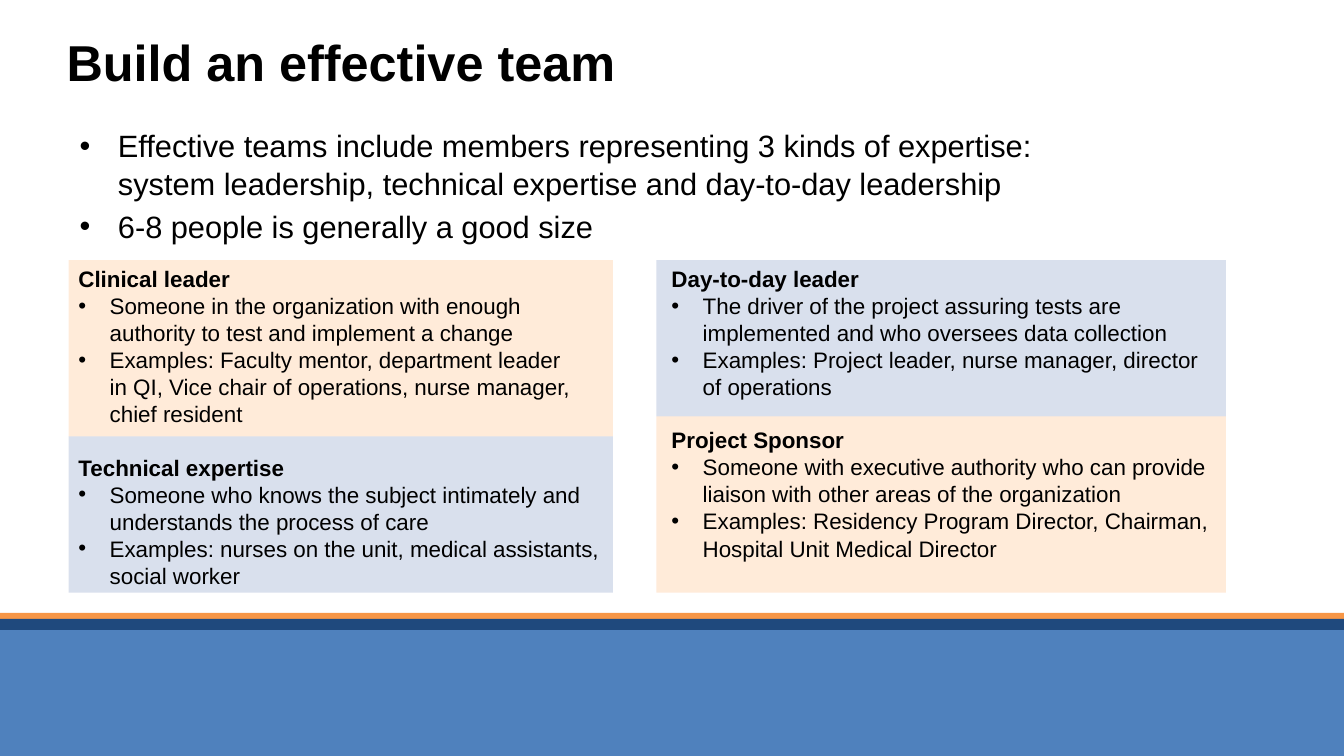
from dataclasses import dataclass

from lxml import etree
from pptx import Presentation
from pptx.dml.color import RGBColor
from pptx.enum.shapes import MSO_SHAPE
from pptx.enum.text import MSO_ANCHOR, MSO_AUTO_SIZE, PP_ALIGN
from pptx.oxml.ns import qn
from pptx.util import Inches, Pt

RECT = MSO_SHAPE.RECTANGLE
TOP, MIDDLE = MSO_ANCHOR.TOP, MSO_ANCHOR.MIDDLE
LEFT = PP_ALIGN.LEFT
NO_FIT = MSO_AUTO_SIZE.NONE

BLACK = RGBColor(0x00, 0x00, 0x00)
ORANGE = RGBColor(0xFF, 0x79, 0x00)
NAVY = RGBColor(0x01, 0x31, 0x89)
STRIPE = RGBColor(0xF7, 0x96, 0x46)
BLUE = RGBColor(0x4F, 0x81, 0xBD)
DARK = RGBColor(0x1F, 0x49, 0x7D)

FONT = "Arial"
LEADING = 1.205  # line height per point of text


@dataclass
class Band:
    top: float
    height: float
    color: RGBColor


@dataclass
class Card:
    left: float
    top: float
    width: float
    height: float
    color: RGBColor
    inset: tuple[float, float]  # left, top
    head: str
    points: list[str]


BANDS = [Band(6.08, 0.11, STRIPE), Band(6.19, 1.31, BLUE), Band(6.14, 0.11, DARK)]

GOALS = [
    "Effective teams include members representing 3 kinds of expertise:\n"
    "system leadership, technical expertise and day-to-day leadership",
    "6-8 people is generally a good size",
]

CARDS = [
    Card(0.68, 2.58, 5.4, 1.75, ORANGE, (0.1, 0.05), "Clinical leader", [
        "Someone in the organization with enough\n"
        "authority to test and implement a change",
        "Examples: Faculty mentor, department leader\n"
        "in QI, Vice chair of operations, nurse manager,\nchief resident",
    ]),
    Card(0.68, 4.33, 5.4, 1.55, NAVY, (0.1, 0.17), "Technical expertise", [
        "Someone who knows the subject intimately and "
        "understands the process of care",
        "Examples: nurses on the unit, medical assistants, social worker",
    ]),
    Card(6.51, 2.58, 5.65, 1.55, NAVY, (0.15, 0.05), "Day-to-day leader", [
        "The driver of the project assuring tests are "
        "implemented and who oversees data collection",
        "Examples: Project leader, nurse manager, director\nof operations",
    ]),
    Card(6.51, 4.13, 5.65, 1.75, ORANGE, (0.15, 0.1), "Project Sponsor", [
        "Someone with executive authority who can provide "
        "liaison with other areas of the organization",
        "Examples: Residency Program Director, Chairman, "
        "Hospital Unit Medical Director",
    ]),
]


def place(shape, left: float, top: float, width: float, height: float) -> None:
    shape.left, shape.top = Inches(left), Inches(top)
    shape.width, shape.height = Inches(width), Inches(height)


def set_frame(frame, anchor, left: float = 0.1, top: float = 0.05,
              right: float = 0.1) -> None:
    frame.word_wrap = True
    frame.auto_size = NO_FIT
    frame.vertical_anchor = anchor
    frame.margin_left, frame.margin_top = Inches(left), Inches(top)
    frame.margin_right, frame.margin_bottom = Inches(right), Inches(0)


def add_line(frame, first: bool, text: str, size: int, bold: bool = False,
             indent: float = 0, before: float = 0) -> None:
    para = frame.paragraphs[0] if first else frame.add_paragraph()
    if indent:
        props = para._p.get_or_add_pPr()
        props.set("marL", str(Inches(indent)))
        props.set("indent", str(-Inches(indent)))
        etree.SubElement(props, qn("a:buFont")).set("typeface", FONT)
        etree.SubElement(props, qn("a:buChar")).set("char", "•")
    para.alignment = LEFT
    para.line_spacing = Pt(round(size * LEADING, 1))
    para.space_before = Pt(0 if first else before)
    para.space_after = Pt(0)
    for i, part in enumerate(text.split("\n")):
        if i:
            para.add_line_break()
        run = para.add_run()
        run.text = part
        run.font.name = FONT
        run.font.size = Pt(size)
        run.font.bold = bold
        run.font.color.rgb = BLACK


def add_rect(slide, left: float, top: float, width: float, height: float,
             color: RGBColor):
    shape = slide.shapes.add_shape(RECT, 0, 0, 0, 0)
    place(shape, left, top, width, height)
    shape.shadow.inherit = False
    shape.fill.solid()
    shape.fill.fore_color.rgb = color
    shape.line.fill.background()
    return shape


def add_card(slide, card: Card) -> None:
    shape = add_rect(slide, card.left, card.top, card.width, card.height, card.color)
    tint = shape._element.spPr.find(qn("a:solidFill"))[0]
    etree.SubElement(tint, qn("a:alpha")).set("val", "15000")
    frame = shape.text_frame
    set_frame(frame, TOP, *card.inset, right=0)
    add_line(frame, True, card.head, 16, bold=True)
    for point in card.points:
        add_line(frame, False, point, 16, indent=0.31)


def main() -> None:
    deck = Presentation()
    deck.slide_width, deck.slide_height = Inches(13.33), Inches(7.5)
    slide = deck.slides.add_slide(deck.slide_layouts[1])

    # Title
    title = slide.shapes.title
    place(title, 0.56, 0, 12.11, 1.17)
    set_frame(title.text_frame, MIDDLE)
    add_line(title.text_frame, True, "Build an effective team", 36, bold=True)

    # Main points
    body = slide.placeholders[1]
    place(body, 0.69, 1.21, 11.98, 1.31)
    set_frame(body.text_frame, TOP)
    for i, goal in enumerate(GOALS):
        add_line(body.text_frame, i == 0, goal, 22, indent=0.38, before=4.4)

    # Footer bands
    for band in BANDS:
        add_rect(slide, 0, band.top, 13.33, band.height, band.color)

    # Role cards
    for card in CARDS:
        add_card(slide, card)

    deck.save("out.pptx")


if __name__ == "__main__":
    main()
